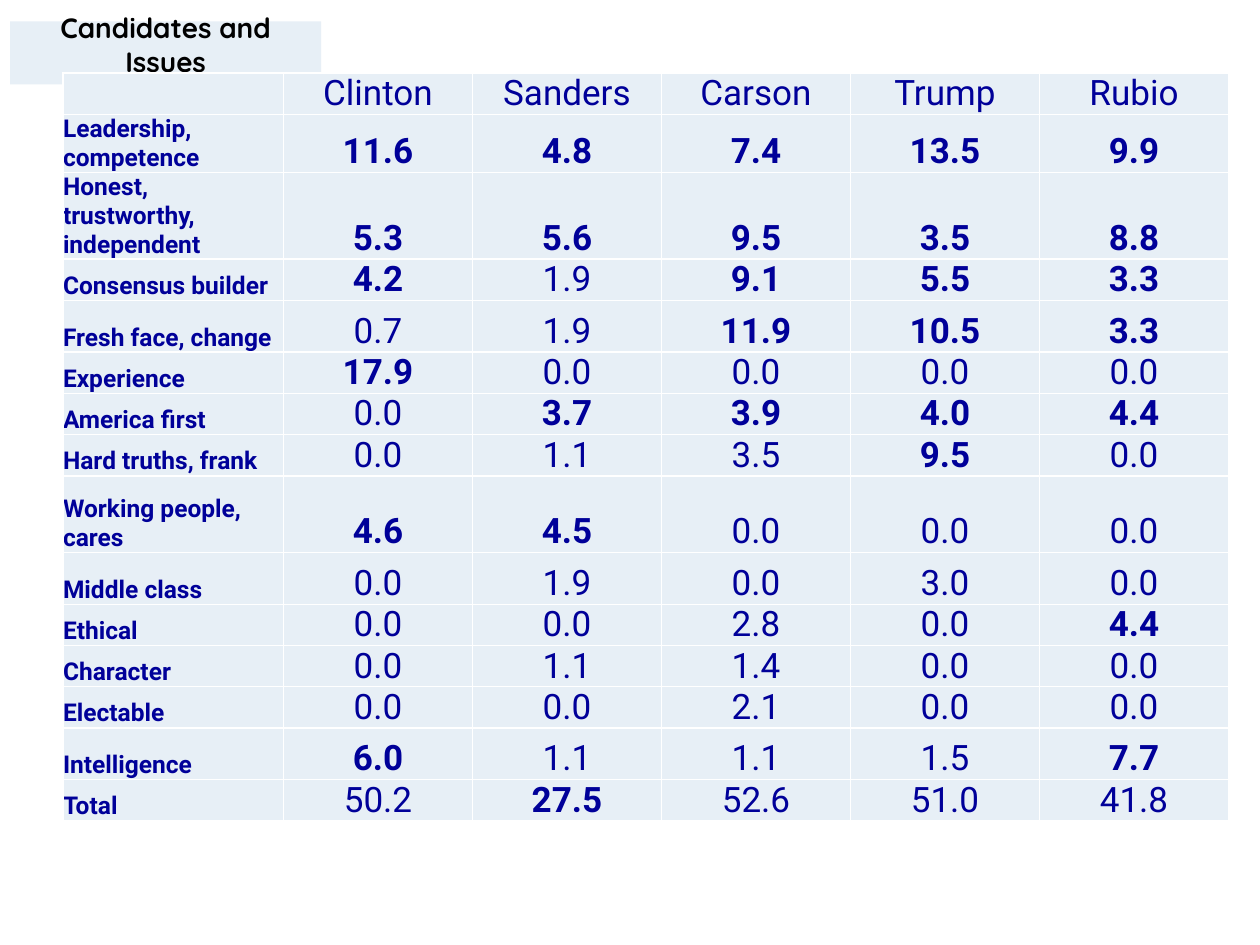
from lxml import etree
from pptx import Presentation
from pptx import util as u
from pptx.dml.color import RGBColor
from pptx.enum import shapes, text
from pptx.oxml.ns import qn

PALE, NAVY, WHITE, BLACK = "E7EFF6", "000099", "FFFFFF", "000000"

CANDIDATES = ["Clinton", "Sanders", "Carson", "Trump", "Rubio"]
COLUMN_WIDTHS = [1.75] + [1.5] * len(CANDIDATES)
HEADER_HEIGHT = 0.22

# Row height, issue, then one value per candidate; * marks a bold value
ISSUES = [
    (0.41, "Leadership, competence", "*11.6 *4.8 *7.4 *13.5 *9.9"),
    (0.61, "Honest, trustworthy, independent", "*5.3 *5.6 *9.5 *3.5 *8.8"),
    (0.24, "Consensus builder", "*4.2 1.9 *9.1 *5.5 *3.3"),
    (0.41, "Fresh face, change", "0.7 1.9 *11.9 *10.5 *3.3"),
    (0.1, "Experience", "*17.9 0.0 0.0 0.0 0.0"),
    (0.17, "America first", "0.0 *3.7 *3.9 *4.0 *4.4"),
    (0.25, "Hard truths, frank", "0.0 1.1 3.5 *9.5 0.0"),
    (0.61, "Working people, cares", "*4.6 *4.5 0.0 0.0 0.0"),
    (0.41, "Middle class", "0.0 1.9 0.0 3.0 0.0"),
    (0.22, "Ethical", "0.0 0.0 2.8 0.0 *4.4"),
    (0.22, "Character", "0.0 1.1 1.4 0.0 0.0"),
    (0.22, "Electable", "0.0 0.0 2.1 0.0 0.0"),
    (0.41, "Intelligence", "*6.0 1.1 1.1 1.5 *7.7"),
    (0.22, "Total", "50.2 *27.5 52.6 51.0 41.8"),
]


def color(value):
    return RGBColor.from_string(value)


def set_fill(item, value):
    item.fill.solid()
    item.fill.fore_color.rgb = color(value)


def set_font(font, value, **formats):
    for name, setting in formats.items():
        setattr(font, name, setting)
    font.color.rgb = color(value)


def add_title(page, words):
    box = page.shapes.add_shape(
        shapes.MSO_SHAPE.RECTANGLE,
        u.Inches(0.08), u.Inches(0.17), u.Inches(2.47), u.Inches(0.5))
    box.shadow.inherit = False
    set_fill(box, PALE)
    box.line.fill.background()
    frame = box.text_frame
    frame.word_wrap = True
    frame.vertical_anchor = text.MSO_ANCHOR.BOTTOM
    para = frame.paragraphs[0]
    para.alignment = text.PP_ALIGN.CENTER
    span = para.add_run()
    span.text = words
    set_font(span.font, BLACK, name="Quicksand", size=u.Pt(16), bold=True)


def set_borders(cell, value, width):
    properties = cell._tc.get_or_add_tcPr()
    for position, side in enumerate(("a:lnL", "a:lnR", "a:lnT", "a:lnB")):
        line = etree.Element(qn(side), w=str(u.Pt(width)))
        fill = etree.SubElement(line, qn("a:solidFill"))
        etree.SubElement(fill, qn("a:srgbClr"), val=value)
        properties.insert(position, line)


def fill_cell(cell, words, size, bold, alignment):
    for side in ("left", "right", "top", "bottom"):
        setattr(cell, f"margin_{side}", 0)
    cell.vertical_anchor = text.MSO_ANCHOR.BOTTOM
    set_fill(cell, PALE)
    set_borders(cell, WHITE, 1)
    para = cell.text_frame.paragraphs[0]
    para.alignment = alignment
    formats = {"name": "Roboto", "size": u.Pt(size), "bold": bold}
    set_font(para.font, NAVY, **formats)
    if words:
        span = para.add_run()
        span.text = words
        set_font(span.font, NAVY, **formats)


def fill_row(table, index, height, label, values):
    table.rows[index].height = u.Inches(height)
    fill_cell(table.cell(index, 0), label, 14, True, text.PP_ALIGN.LEFT)
    for column, value in enumerate(values, 1):
        fill_cell(table.cell(index, column), value.lstrip("*"), 20,
                  value.startswith("*"), text.PP_ALIGN.CENTER)


def add_issue_table(page):
    heights = [HEADER_HEIGHT] + [height for height, _, _ in ISSUES]
    table = page.shapes.add_table(
        len(heights), len(COLUMN_WIDTHS), u.Inches(0.5), u.Inches(0.58),
        u.Inches(sum(COLUMN_WIDTHS)), u.Inches(sum(heights))).table
    table.first_row = table.horz_banding = False
    for column, width in zip(table.columns, COLUMN_WIDTHS):
        column.width = u.Inches(width)
    fill_row(table, 0, HEADER_HEIGHT, "", CANDIDATES)
    for index, (height, label, values) in enumerate(ISSUES, 1):
        fill_row(table, index, height, label, values.split())


def main():
    deck = Presentation()
    deck.slide_width, deck.slide_height = u.Inches(10), u.Inches(7.5)
    page = deck.slides.add_slide(deck.slide_layouts[6])
    set_fill(page.background, WHITE)
    add_title(page, "Candidates and Issues")
    add_issue_table(page)
    deck.save("out.pptx")


if __name__ == "__main__":
    main()
